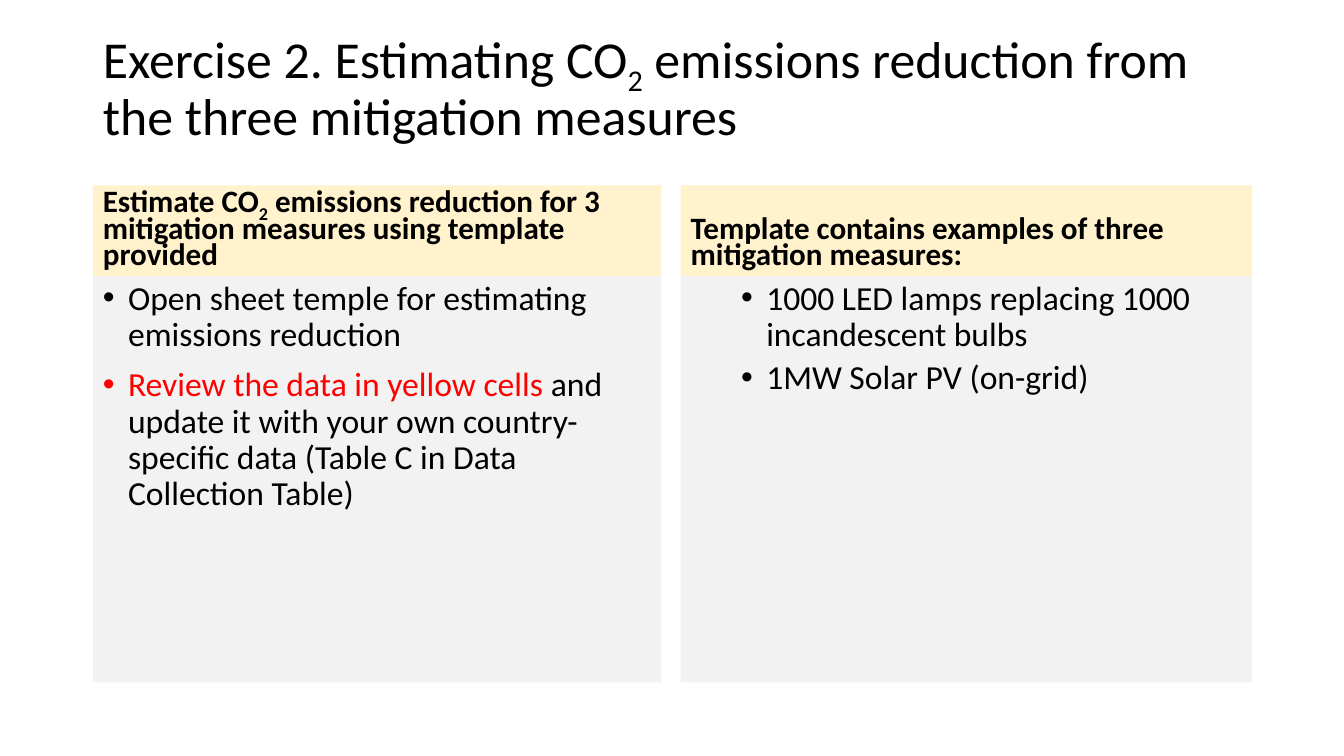
from lxml import etree
from pptx import Presentation
from pptx.dml.color import RGBColor
from pptx.enum.text import MSO_ANCHOR, MSO_AUTO_SIZE, PP_ALIGN
from pptx.oxml.ns import qn
from pptx.util import Inches, Pt

TOP, MIDDLE, BOTTOM = MSO_ANCHOR.TOP, MSO_ANCHOR.MIDDLE, MSO_ANCHOR.BOTTOM
LEFT, NO_FIT = PP_ALIGN.LEFT, MSO_AUTO_SIZE.NONE
COMPARISON = 4  # layout: title, then a heading and a list on each side

FONT = "Calibri"
COLORS = {"text": "000000", "accent": "FF0000", "heading": "FFF2CC", "list": "F2F2F2"}

# A paragraph is a list of (text, style) runs.
TITLE = [("Exercise 2. Estimating CO", ""), ("2", "sub"),
         (" emissions reduction from the three mitigation measures", "")]
COLUMNS = [
    {"left": 0.92, "width": 5.64, "level": 0,
     "heading": [("Estimate CO", ""), ("2", "sub"),
                 (" emissions reduction for 3 mitigation measures using template provided", "")],
     "list": [[("Open sheet temple for estimating emissions reduction", "")],
              [("Review the data in yellow cells ", "accent"),
               ("and update it with your own country-specific data "
                "(Table C in Data Collection Table)", "")]]},
    {"left": 6.75, "width": 5.67, "level": 1,
     "heading": [("Template contains examples of three mitigation measures:", "")],
     "list": [[("1000 LED lamps replacing 1000 incandescent bulbs", "")],
              [("1MW Solar PV (on-grid)", "")]]},
]

TITLE_BOX = (0.92, 0.14, 11.5, 1.45)
HEADING_TOP, HEADING_HEIGHT, LIST_HEIGHT = 1.84, 0.9, 4.03
TITLE_FONT = {"size": Pt(37), "bold": False}
HEADING_FONT = {"size": Pt(22.2), "bold": True}
LIST_FONT = {"size": Pt(24), "bold": False}


def rgb(name):
    return RGBColor.from_string(COLORS[name])


def set_bullet(p):
    """Give a paragraph a hanging round bullet, indented by its level."""
    pPr = p._p.get_or_add_pPr()
    pPr.set("marL", str(Inches(0.25 + 0.5 * p.level)))
    pPr.set("indent", str(Inches(-0.25)))
    etree.SubElement(pPr, qn("a:buFont")).set("typeface", "Arial")
    etree.SubElement(pPr, qn("a:buChar")).set("char", "•")


def fill_placeholder(sp, box, paragraphs, font, anchor, spacing,
                     before=0, level=0, bullet=False, fill=None):
    sp.left, sp.top, sp.width, sp.height = map(Inches, box)
    if fill:
        sp.fill.solid()
        sp.fill.fore_color.rgb = rgb(fill)
    tf = sp.text_frame
    tf.auto_size, tf.vertical_anchor = NO_FIT, anchor
    for i, runs in enumerate(paragraphs):
        p = tf.add_paragraph() if i else tf.paragraphs[0]
        layout = {"level": level, "alignment": LEFT,
                  "line_spacing": spacing, "space_before": Pt(before)}
        for name, value in layout.items():
            setattr(p, name, value)
        if bullet:
            set_bullet(p)
        for text, style in runs:
            r = p.add_run()
            r.text = text
            for name, value in {"name": FONT, **font}.items():
                setattr(r.font, name, value)
            r.font.color.rgb = rgb("accent" if style == "accent" else "text")
            if style == "sub":
                r._r.get_or_add_rPr().set("baseline", "-25000")


prs = Presentation()
prs.slide_width, prs.slide_height = Inches(13.33), Inches(7.5)
s = prs.slides.add_slide(prs.slide_layouts[COMPARISON])

fill_placeholder(s.shapes.title, TITLE_BOX, [TITLE], TITLE_FONT, MIDDLE, 0.9)

for i, col in enumerate(COLUMNS):
    left, width, level = col["left"], col["width"], col["level"]
    fill_placeholder(s.placeholders[1 + 2 * i],
                     (left, HEADING_TOP, width, HEADING_HEIGHT),
                     [col["heading"]], HEADING_FONT, BOTTOM, 0.7,
                     before=10, fill="heading")
    fill_placeholder(s.placeholders[2 + 2 * i],
                     (left, HEADING_TOP + HEADING_HEIGHT, width, LIST_HEIGHT),
                     col["list"], LIST_FONT, TOP, 0.9,
                     before=5 if level else 10, level=level, bullet=True, fill="list")

prs.save("out.pptx")
